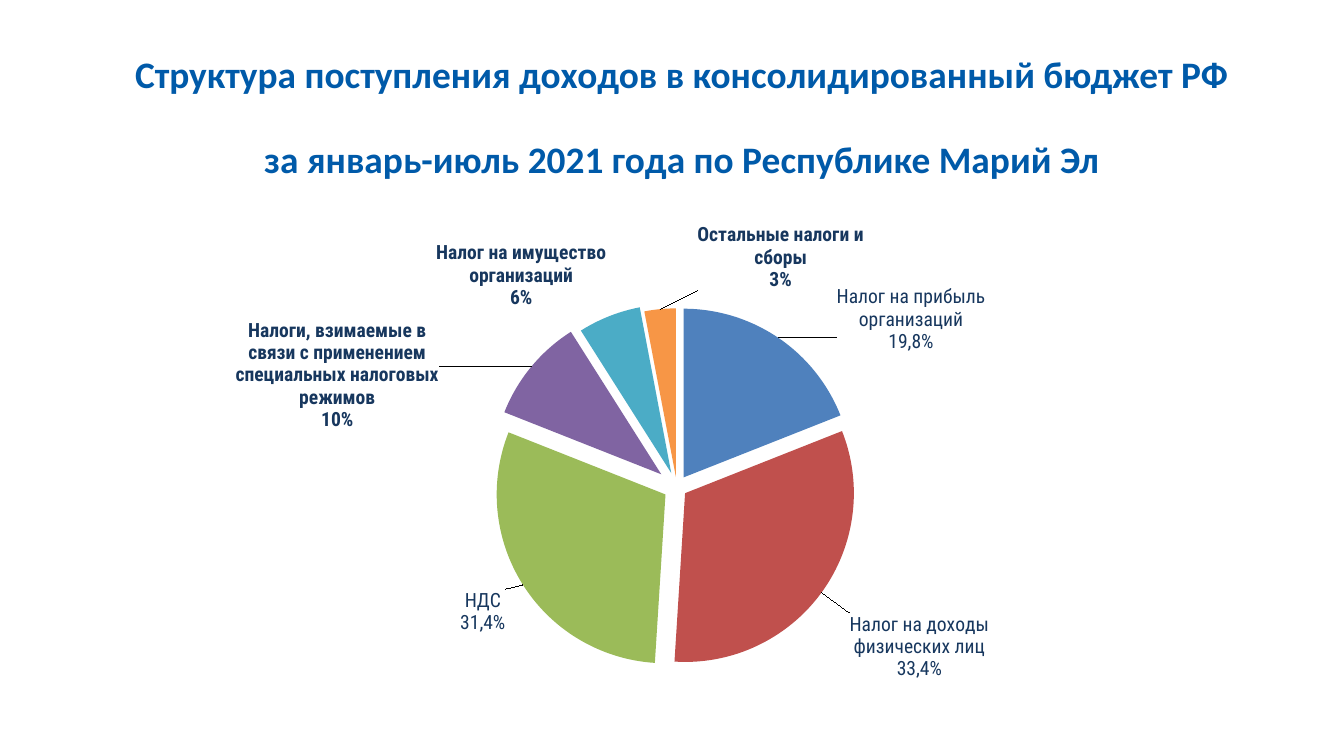
from dataclasses import dataclass

from lxml import etree
from pptx import Presentation
from pptx import util as u
from pptx.chart.data import CategoryChartData
from pptx.dml.color import RGBColor
from pptx.enum import chart as charts, text
from pptx.oxml import ns

TITLE_COLOR = "005AA9"
LABEL_COLOR = "17375E"
LABEL_FONT = "Roboto Condensed"
TITLE_LINES = (
    "Структура поступления доходов в консолидированный бюджет РФ",
    "за январь-июль 2021 года по Республике Марий Эл",
)


@dataclass
class Tax:
    name: str
    share: int
    color: str
    explosion: int
    label_shift: tuple[float, float] | None = None
    label_value: str = ""


TAXES = [
    Tax("Налог на прибыль организаций", 19, "4F81BD", 7, (0.05, 0.04), "19,8%"),
    Tax("Налог на доходы физических лиц", 32, "C0504D", 6, (0.02, 0.03), "33,4%"),
    Tax("НДС", 30, "9BBB59", 8, (-0.01, 0), "31,4%"),
    Tax("Налоги, взимаемые в связи с применением специальных налоговых режимов",
        10, "8064A2", 12, (-0.08, 0.13)),
    Tax("Налог на имущество организаций", 6, "4BACC6", 9),
    Tax("Остальные налоги и сборы", 3, "F79646", 6, (0.19, -0.02)),
]


def set_font(font, name: str, size: float, color: str, bold: bool) -> None:
    font.name, font.size, font.bold = name, u.Pt(size), bold
    font.color.rgb = RGBColor.from_string(color)


def element(tag: str, value: object = None):
    node = etree.Element(ns.qn(f"c:{tag}"))
    if value is not None:
        node.set("val", str(value))
    return node


def manual_layout(**values: object):
    layout = element("layout")
    manual = element("manualLayout")
    layout.append(manual)
    manual.extend([element(tag, value) for tag, value in values.items()])
    return layout


def show_name_and_percent(labels) -> None:
    for tag, value in (("showVal", 0), ("showCatName", 1), ("showPercent", 1)):
        labels.find(ns.qn(f"c:{tag}")).set("val", str(value))
    separator = element("separator")
    separator.text = "\n"
    labels.find(ns.qn("c:showBubbleSize")).addnext(separator)


def add_title(slide) -> None:
    box = slide.shapes.add_textbox(u.Cm(2.29), u.Cm(1.04), u.Cm(21.2), u.Cm(2.31))
    frame = box.text_frame
    frame.word_wrap = True
    frame.margin_left = frame.margin_right = 0
    frame.vertical_anchor = text.MSO_ANCHOR.MIDDLE
    frame.text = "\n".join(TITLE_LINES)
    for paragraph in frame.paragraphs:
        paragraph.alignment = text.PP_ALIGN.CENTER
        set_font(paragraph.font, "Calibri", 20, TITLE_COLOR, True)
    frame.paragraphs[1].space_before = u.Pt(22)


def style_slice(series, index: int, tax: Tax) -> None:
    point = series.points[index]
    point.format.fill.solid()
    point.format.fill.fore_color.rgb = RGBColor.from_string(tax.color)
    slice_xml = series._element.findall(ns.qn("c:dPt"))[index]
    slice_xml.find(ns.qn("c:spPr")).addprevious(element("explosion", tax.explosion))
    if tax.label_shift is None:
        return

    # Shifted label, with its own wording where the value is given
    label = point.data_label
    label.position = charts.XL_LABEL_POSITION.OUTSIDE_END
    if tax.label_value:
        label.text_frame.text = f"{tax.name}\n{tax.label_value}"
        for paragraph in label.text_frame.paragraphs:
            for run in paragraph.runs:
                set_font(run.font, LABEL_FONT, 10.5, LABEL_COLOR, False)
    else:
        set_font(label.font, LABEL_FONT, 10.5, LABEL_COLOR, True)
    label_xml = series._element.xpath(f"c:dLbls/c:dLbl[c:idx/@val='{index}']")[0]
    for old in label_xml.findall(ns.qn("c:layout")):
        label_xml.remove(old)
    x, y = tax.label_shift
    label_xml.find(ns.qn("c:idx")).addnext(manual_layout(x=x, y=y))
    show_name_and_percent(label_xml)


def add_pie(slide) -> None:
    data = CategoryChartData()
    data.categories = [tax.name for tax in TAXES]
    data.add_series("Series 1", [tax.share for tax in TAXES])
    chart = slide.shapes.add_chart(
        charts.XL_CHART_TYPE.PIE, u.Cm(2.11), u.Cm(3.73), u.Cm(20.35), u.Cm(10.06), data
    ).chart
    chart.has_title = chart.has_legend = False
    set_font(chart.font, "Calibri", 10, "000000", False)
    plot = chart.plots[0]
    plot.vary_by_categories = True

    # Place of the pie inside the chart
    area = chart._chartSpace.find(".//" + ns.qn("c:plotArea"))
    for old in area.findall(ns.qn("c:layout")):
        area.remove(old)
    area.insert(0, manual_layout(layoutTarget="inner", xMode="edge", yMode="edge",
                                 x=0.34, y=0.17, w=0.37, h=0.75))

    # Labels shared by all slices
    series = plot.series[0]
    series._element.find(ns.qn("c:tx")).addnext(element("explosion", 18))
    labels = series.data_labels
    labels.number_format, labels.number_format_is_linked = "0%", False
    labels.position = charts.XL_LABEL_POSITION.OUTSIDE_END
    set_font(labels.font, LABEL_FONT, 10.5, LABEL_COLOR, True)
    labels_xml = series._element.find(ns.qn("c:dLbls"))
    show_name_and_percent(labels_xml)
    for old in labels_xml.findall(ns.qn("c:showLeaderLines")):
        labels_xml.remove(old)
    labels_xml.find(ns.qn("c:separator")).addnext(element("showLeaderLines", 1))

    for index, tax in enumerate(TAXES):
        style_slice(series, index, tax)


def main() -> None:
    presentation = Presentation()
    presentation.slide_width, presentation.slide_height = u.Cm(25.4), u.Cm(14.29)
    slide = presentation.slides.add_slide(presentation.slide_layouts[6])
    add_title(slide)
    add_pie(slide)
    presentation.save("out.pptx")


if __name__ == "__main__":
    main()
